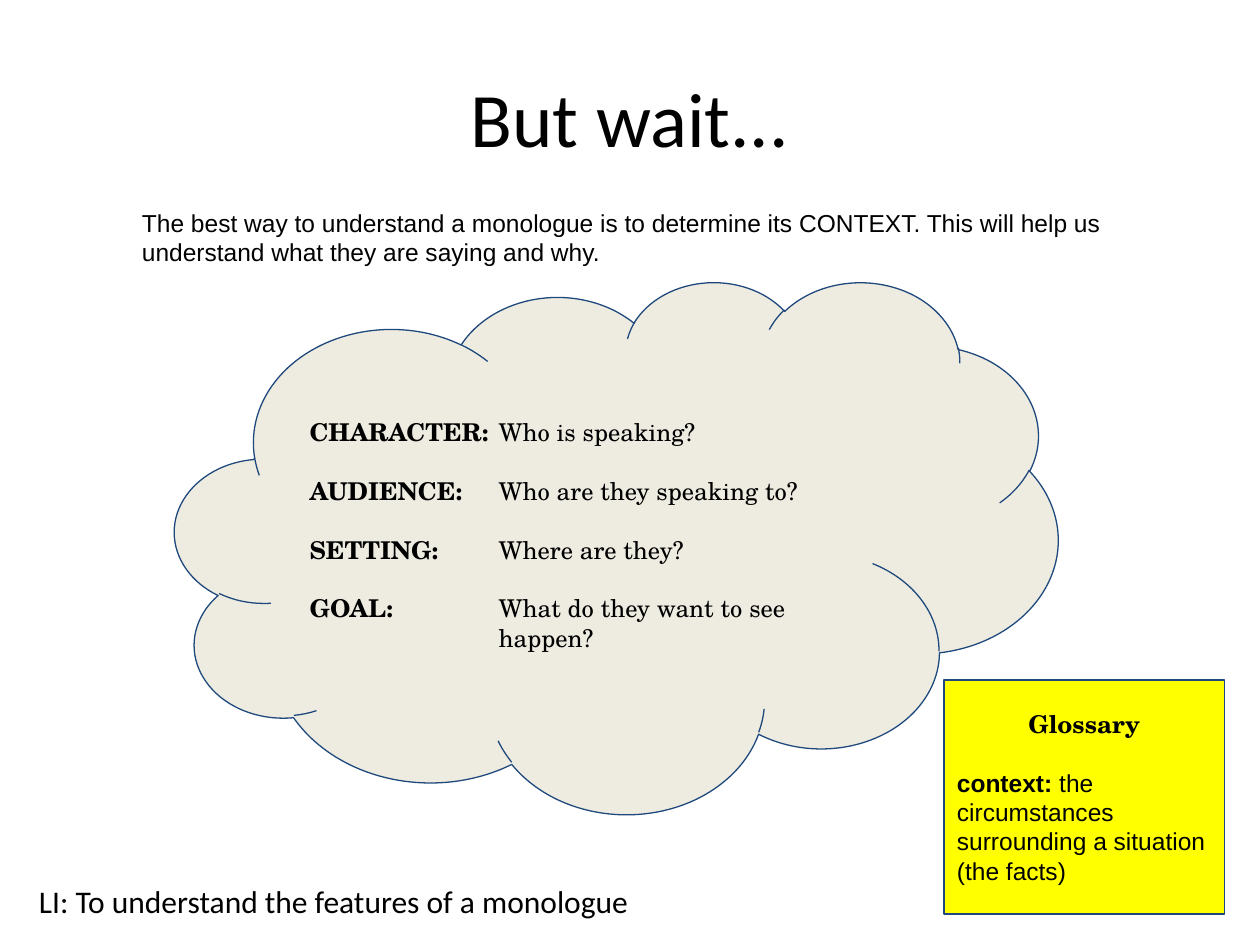
import pptx
import pptx.util
import pptx.dml.color
import pptx.enum.shapes
import pptx.enum.text

Pt = pptx.util.Pt
RGBColor = pptx.dml.color.RGBColor
MSO_SHAPE = pptx.enum.shapes.MSO_SHAPE
ANCHOR = pptx.enum.text.MSO_ANCHOR
ALIGN = pptx.enum.text.PP_ALIGN

BLACK = RGBColor(0x00, 0x00, 0x00)
NAVY = RGBColor(0x1F, 0x49, 0x7D)
CREAM = RGBColor(0xEE, 0xEC, 0xE1)
YELLOW = RGBColor(0xFF, 0xFF, 0x00)

SERIF = "TeX Gyre Schola"
PX = 914400 // 126
BLANK_LINE = Pt(16.8)


def place(sp, box, anchor, inset_y):
    """Set position, insets and wrapping; return the text frame."""
    tf = sp.text_frame
    tf.word_wrap = True
    sp.left, sp.top, sp.width, sp.height = [v * PX for v in box]
    frame = {"vertical_anchor": anchor, "margin_left": 13 * PX, "margin_right": 13 * PX,
             "margin_top": inset_y * PX, "margin_bottom": inset_y * PX}
    for name, value in frame.items():
        setattr(tf, name, value)
    return tf


def write(p, text, font, size=14, bold=False, align=ALIGN.LEFT):
    p.alignment = align
    r = p.add_run()
    r.text = text
    for name, value in {"name": font, "size": Pt(size), "bold": bold}.items():
        setattr(r.font, name, value)
    r.font.color.rgb = BLACK


prs = pptx.Presentation()
prs.slide_width = 1260 * PX
prs.slide_height = 945 * PX
s = prs.slides.add_slide(prs.slide_layouts[5])

# Title
tf = place(s.shapes.title, (63, 38, 1134, 158), ANCHOR.MIDDLE, 6)
write(tf.paragraphs[0], "But wait...", "Calibri", 44, align=ALIGN.CENTER)

# Learning intention
tf = place(s.shapes.add_textbox(0, 0, 0, 0), (26, 876, 1181, 50), ANCHOR.MIDDLE, 6)
write(tf.paragraphs[0], "LI: To understand the features of a monologue", "Calibri", 18)

# Cloud and glossary box
panels = []
for kind, box, fill in [
    (MSO_SHAPE.CLOUD, (175, 281, 883, 532), CREAM),
    (MSO_SHAPE.RECTANGLE, (944, 680, 281, 234), YELLOW),
]:
    sp = s.shapes.add_shape(kind, 0, 0, 0, 0)
    sp.shadow.inherit = False
    sp.fill.solid()
    sp.fill.fore_color.rgb = fill
    sp.line.color.rgb = NAVY
    sp.line.width = Pt(0.75)
    panels.append(place(sp, box, ANCHOR.MIDDLE, 13))
cloud, glossary = panels

# Context questions
questions = [
    ("CHARACTER:", " \tWho is speaking?"),
    ("AUDIENCE:", " \tWho are they speaking to?"),
    ("SETTING:", " \tWhere are they?"),
    ("GOAL:", " \t\tWhat do they want to see"),
]
for i, (label, question) in enumerate(questions):
    p = cloud.add_paragraph() if i else cloud.paragraphs[0]
    if i:
        p.space_before = BLANK_LINE
    write(p, label, SERIF, bold=True)
    write(p, question, SERIF)
p = cloud.add_paragraph()
pPr = p._p.get_or_add_pPr()
pPr.set("marL", str(126 * PX))
pPr.set("indent", str(63 * PX))
write(p, "happen?", SERIF)

# Glossary
write(glossary.paragraphs[0], "Glossary", SERIF, bold=True, align=ALIGN.CENTER)
p = glossary.add_paragraph()
p.space_before = BLANK_LINE
write(p, "context:", "Arial", bold=True)
write(p, " the circumstances surrounding a situation (the facts)", "Arial")

# Introduction
tf = place(s.shapes.add_textbox(0, 0, 0, 0), (129, 195, 1033, 108), ANCHOR.TOP, 13)
write(tf.paragraphs[0], "The best way to understand a monologue is to determine its CONTEXT. "
      "This will help us understand what they are saying and why.", "Arial")

prs.save("out.pptx")
